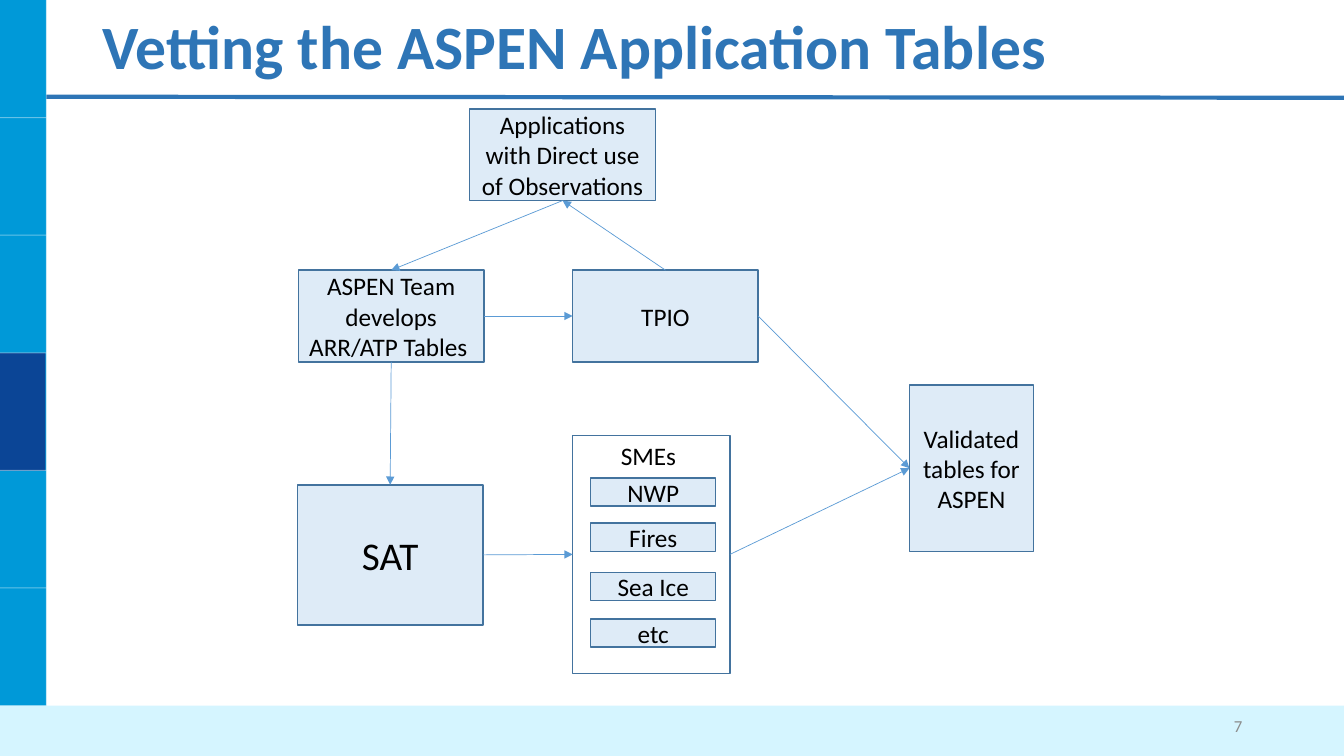
import pptx
import pptx.util
import pptx.dml.color
import pptx.enum.shapes
import pptx.enum.text
import pptx.oxml
import lxml.etree
from pptx.util import Inches

COLORS = {
    "sidebar": "0099D8", "current": "0B4596", "divider": "FFFFFF",
    "footer": "D5F5FF", "heading": "2E75B6", "number": "8C8C8C",
    "box": "DEEBF7", "border": "43739E", "arrow": "5B9BD5", "text": "000000",
}
RGB = {name: pptx.dml.color.RGBColor.from_string(value) for name, value in COLORS.items()}
ALIGN = pptx.enum.text.PP_ALIGN
ANCHOR = pptx.enum.text.MSO_ANCHOR
TOP, LEFT, BOTTOM, RIGHT = range(4)  # connection sites of a rectangle

deck = pptx.Presentation()
deck.slide_width, deck.slide_height = Inches(13.33), Inches(7.5)
slide = deck.slides.add_slide(deck.slide_layouts[6])
shapes = slide.shapes


def add_box(place, fill=None, border=None, text="", size=18, color="text",
            align=ALIGN.CENTER, anchor=ANCHOR.MIDDLE, bold=False):
    """Draw a rectangle with one paragraph of text; place is left, top, width, height."""
    box = shapes.add_shape(pptx.enum.shapes.MSO_SHAPE.RECTANGLE, *map(Inches, place))
    box.shadow.inherit = False
    for part, shade in ((box.fill, fill), (box.line.fill, border)):
        if shade:
            part.solid()
            part.fore_color.rgb = RGB[shade]
        else:
            part.background()
    if border:
        box.line.width = pptx.util.Pt(1)
    if text:
        frame = box.text_frame
        frame.word_wrap, frame.vertical_anchor = True, anchor
        paragraph = frame.paragraphs[0]
        paragraph.text, paragraph.alignment = text, align
        font_format = {"name": "Calibri", "size": pptx.util.Pt(size), "bold": bold}
        for attribute, value in font_format.items():
            setattr(paragraph.runs[0].font, attribute, value)
        paragraph.runs[0].font.color.rgb = RGB[color]
    return box


def add_line(start, end, color, width):
    line = shapes.add_connector(pptx.enum.shapes.MSO_CONNECTOR.STRAIGHT,
                                *map(Inches, (*start, *end)))
    line.line.color.rgb = RGB[color]
    line.line.width = pptx.util.Pt(width)
    lxml.etree.SubElement(line._element.spPr, pptx.oxml.ns.qn("a:effectLst"))
    return line


# Sidebar, footer and heading
add_box((0, 0, 0.46, 7.5), "sidebar")
add_box((0, 3.5, 0.45, 1.17), "current")
divider_ends = [((0, 7 * step / 6), (0.46, 7 * step / 6)) for step in range(1, 7)]
for start, end in divider_ends + [((0.46, 0), (0.46, 7.5))]:
    divider = add_line(start, end, "divider", 0.75)
    tint = divider.line._ln.find(".//" + pptx.oxml.ns.qn("a:srgbClr"))
    lxml.etree.SubElement(tint, pptx.oxml.ns.qn("a:alpha"), val="40000")
add_box((0, 7, 13.33, 0.5), "footer")
add_line((0.46, 0.96), (13.33, 0.97), "heading", 3)
title = add_box((0.92, 0.04, 11.5, 0.91), text="Vetting the ASPEN Application Tables",
                size=44, color="heading", align=ALIGN.LEFT, bold=True)
title.text_frame.paragraphs[0].line_spacing = 0.9
add_box((9.42, 7, 3, 0.4), text="7", size=12, color="number", align=ALIGN.RIGHT)

# Review steps
steps = {}
for name, place, text, size in (
    ("team", (2.96, 2.68, 1.84, 0.91), "ASPEN Team develops ARR/ATP Tables ", 18),
    ("sat", (2.95, 4.81, 1.84, 1.39), "SAT", 28),
    ("tpio", (5.68, 2.68, 1.84, 0.91), "TPIO", 18),
    ("validated", (9.02, 3.82, 1.23, 1.65), "Validated tables for ASPEN", 18),
    ("applications", (4.66, 1.08, 1.84, 0.91),
     "Applications with Direct use of Observations", 18),
):
    steps[name] = add_box(place, "box", "border", text, size)

# Subject matter experts
steps["smes"] = add_box((5.68, 4.32, 1.56, 2.36), None, "border", "SMEs ", anchor=ANCHOR.TOP)
for expert, top in (("NWP", 4.74), ("Fires", 5.19), ("Sea Ice", 5.68), ("etc", 6.14)):
    add_box((5.86, top, 1.24, 0.28), "box", "border", expert)

# Flow between the steps
for source, exit_site, target, entry_site in (
    ("team", BOTTOM, "sat", TOP),
    ("sat", RIGHT, "smes", LEFT),
    ("team", RIGHT, "tpio", LEFT),
    ("tpio", RIGHT, "validated", LEFT),
    ("smes", RIGHT, "validated", LEFT),
    ("tpio", TOP, "applications", BOTTOM),
    ("applications", BOTTOM, "team", TOP),
):
    arrow = add_line((0, 0), (1, 1), "arrow", 0.5)
    arrow.begin_connect(steps[source], exit_site)
    arrow.end_connect(steps[target], entry_site)
    lxml.etree.SubElement(arrow.line._ln, pptx.oxml.ns.qn("a:tailEnd"), type="triangle")

deck.save("out.pptx")
